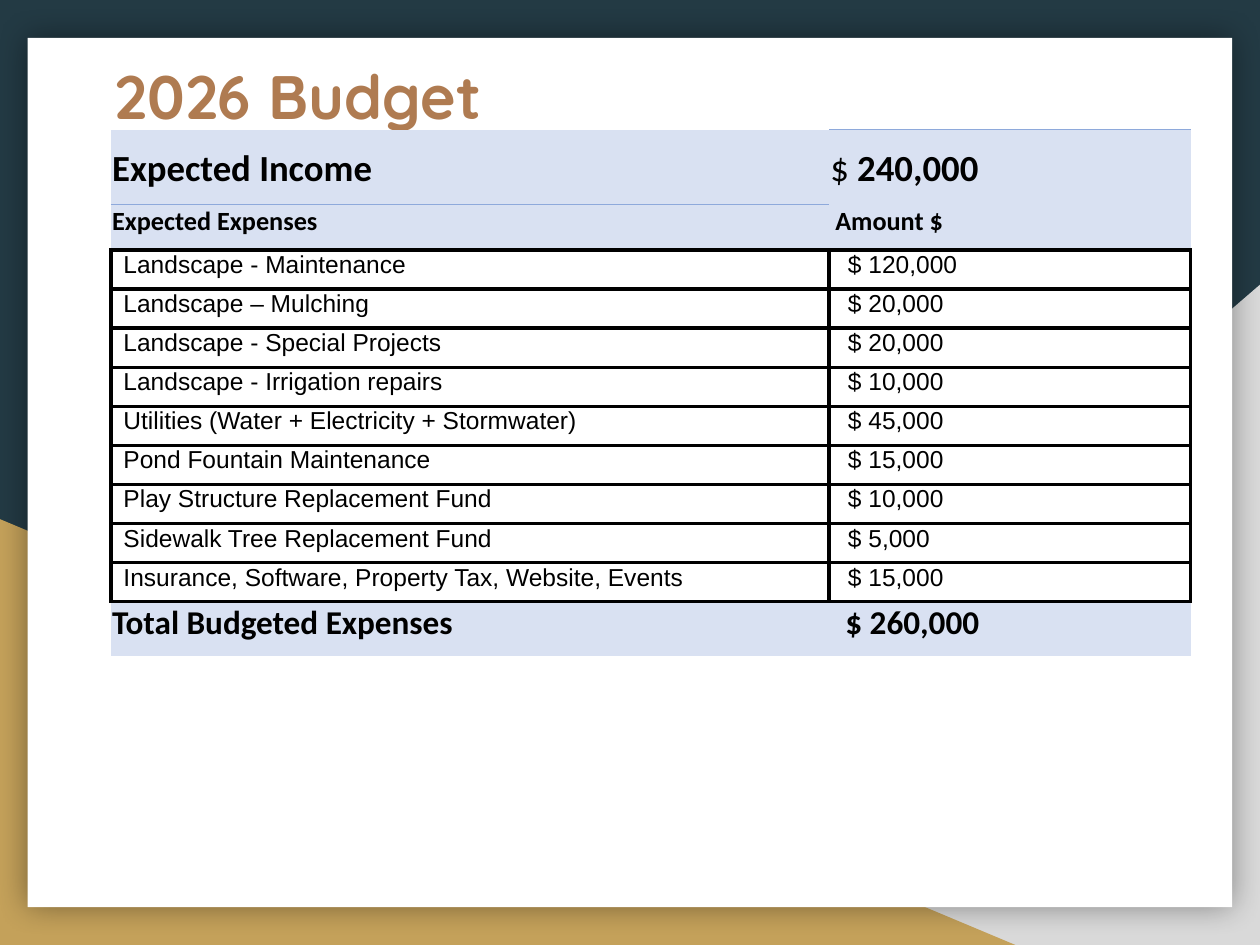
from lxml import etree
from pptx import Presentation
from pptx.dml.color import RGBColor
from pptx.enum.shapes import MSO_SHAPE
from pptx.enum.text import MSO_ANCHOR, MSO_AUTO_SIZE, PP_ALIGN
from pptx.oxml.ns import qn
from pptx.util import Inches, Pt

RECTANGLE, TRIANGLE = MSO_SHAPE.RECTANGLE, MSO_SHAPE.RIGHT_TRIANGLE
TOP, BOTTOM = MSO_ANCHOR.TOP, MSO_ANCHOR.BOTTOM

NAVY = RGBColor(0x23, 0x3A, 0x44)
GRAY = RGBColor(0xD9, 0xD9, 0xD9)
GOLD = RGBColor(0xC4, 0xA1, 0x5A)
WHITE = RGBColor(0xFF, 0xFF, 0xFF)
BLACK = RGBColor(0, 0, 0)
COPPER = RGBColor(0xAF, 0x7B, 0x51)
PALE_BLUE = RGBColor(0xD9, 0xE1, 0xF2)
RULE_BLUE = RGBColor(0x8E, 0xA9, 0xDB)

PLAIN_TABLE = "{2D5ABB26-0587-4C30-8999-92F81FD0307C}"
THICK, THIN = (BLACK, 2.25), (RULE_BLUE, 0.75)
COLUMNS = (5.7, 2.87)
INCOME_HEIGHT, HEADING_HEIGHT, EXPENSE_HEIGHT, TOTAL_HEIGHT = 0.59, 0.36, 0.31, 0.43

EXPENSES = [
    ("Landscape - Maintenance", "$ 120,000"),
    ("Landscape – Mulching", "$ 20,000"),
    ("Landscape - Special Projects", "$ 20,000"),
    ("Landscape - Irrigation repairs", "$ 10,000"),
    ("Utilities (Water + Electricity + Stormwater)", "$ 45,000"),
    ("Pond Fountain Maintenance", "$ 15,000"),
    ("Play Structure Replacement Fund", "$ 10,000"),
    ("Sidewalk Tree Replacement Fund", "$ 5,000"),
    ("Insurance, Software, Property Tax, Website, Events", "$ 15,000"),
]


def add_panel(page, kind, left, top, width, height, color):
    panel = page.shapes.add_shape(
        kind, Inches(left), Inches(top), Inches(width), Inches(height))
    panel.shadow.inherit = False
    panel.fill.solid()
    panel.fill.fore_color.rgb = color
    panel.line.fill.background()
    return panel


def add_soft_shadow(panel):
    effects = panel.element.spPr.find(qn("a:effectLst"))
    shadow = etree.SubElement(effects, qn("a:outerShdw"), blurRad=str(Pt(18)),
                              dist="0", algn="ctr", rotWithShape="0")
    color = etree.SubElement(shadow, qn("a:srgbClr"), val=str(BLACK))
    etree.SubElement(color, qn("a:alpha"), val="40000")


def add_backdrop(page):
    page.background.fill.solid()
    page.background.fill.fore_color.rgb = NAVY
    right_corner = add_panel(page, TRIANGLE, 3.92, 2.26, 6.08, 5.24, GRAY)
    right_corner.element.spPr.find(qn("a:xfrm")).set("flipH", "1")
    add_panel(page, TRIANGLE, 0, 4.12, 8.06, 3.38, GOLD)
    add_soft_shadow(add_panel(page, RECTANGLE, 0.22, 0.3, 9.56, 6.9, WHITE))


def format_span(span, font, size, color, bold):
    span.font.name = font
    span.font.size = Pt(size)
    span.font.color.rgb = color
    span.font.bold = bold


def set_title(page, text):
    title = page.shapes.title
    title.left, title.top = Inches(0.81), Inches(0.36)
    title.width, title.height = Inches(8.21), Inches(0.48)
    frame = title.text_frame
    frame.text = text
    frame.auto_size = MSO_AUTO_SIZE.NONE
    frame.vertical_anchor = TOP
    frame.margin_left = frame.margin_right = Inches(0.1)
    frame.margin_top = frame.margin_bottom = Inches(0.1)
    para = frame.paragraphs[0]
    para.alignment = PP_ALIGN.LEFT
    format_span(para.runs[0], "Quicksand", 35, COPPER, True)
    # Bring the title in front of the backdrop
    page.shapes.element.append(title.element)


def set_borders(cell, **sides):
    properties = cell._tc.get_or_add_tcPr()
    for side in "LRTB":
        color, width = sides.get(side, (None, 0))
        line = etree.SubElement(properties, qn("a:ln" + side), w=str(Pt(width)))
        if color is None:
            etree.SubElement(line, qn("a:noFill"))
        else:
            fill = etree.SubElement(line, qn("a:solidFill"))
            etree.SubElement(fill, qn("a:srgbClr"), val=str(color))


def set_margins(cell, left, top, right, bottom):
    cell.margin_left, cell.margin_top = Inches(left), Inches(top)
    cell.margin_right, cell.margin_bottom = Inches(right), Inches(bottom)


def fill_band_cell(cell, text, size, indent=0.01, **sides):
    set_borders(cell, **sides)
    cell.fill.solid()
    cell.fill.fore_color.rgb = PALE_BLUE
    cell.vertical_anchor = BOTTOM
    set_margins(cell, indent, 0.01, 0.01, 0.1)
    cell.text = text
    format_span(cell.text_frame.paragraphs[0].runs[0], "Calibri", size, BLACK, True)


def fill_expense_cell(cell, text, indent):
    set_borders(cell, L=THICK, R=THICK, T=THICK, B=THICK)
    cell.fill.background()
    cell.vertical_anchor = TOP
    set_margins(cell, indent, 0.1, 0.1, 0.1)
    cell.text = text
    para = cell.text_frame.paragraphs[0]
    para.line_spacing = 0.5
    format_span(para.runs[0], "Arial", 14, BLACK, False)


def add_budget_table(page):
    heights = [INCOME_HEIGHT, HEADING_HEIGHT,
               *[EXPENSE_HEIGHT] * len(EXPENSES), TOTAL_HEIGHT]
    frame = page.shapes.add_table(
        len(heights), len(COLUMNS), Inches(0.88), Inches(1.03),
        Inches(sum(COLUMNS)), Inches(sum(heights)))
    table = frame.table
    table.first_row = table.horz_banding = False
    table._tbl.tblPr.find(qn("a:tableStyleId")).text = PLAIN_TABLE
    for column, width in zip(table.columns, COLUMNS):
        column.width = Inches(width)
    for row, height in zip(table.rows, heights):
        row.height = Inches(height)

    # Income and column headings
    fill_band_cell(table.cell(0, 0), "Expected Income", 21, B=THIN)
    income = table.cell(0, 1)
    fill_band_cell(income, "$ ", 21, T=THIN)
    para = income.text_frame.paragraphs[0]
    para.runs[0].font.bold = False
    amount = para.add_run()
    amount.text = "240,000"
    format_span(amount, "Calibri", 21, BLACK, True)
    fill_band_cell(table.cell(1, 0), "Expected Expenses", 15, T=THIN, B=THICK)
    fill_band_cell(table.cell(1, 1), "Amount $", 15, indent=0.05, B=THICK)

    # Expense lines
    for index, (name, cost) in enumerate(EXPENSES, start=2):
        fill_expense_cell(table.cell(index, 0), name, 0.1)
        fill_expense_cell(table.cell(index, 1), cost, 0.15)

    # Total
    last = len(heights) - 1
    fill_band_cell(table.cell(last, 0), "Total Budgeted Expenses", 19, T=THICK)
    fill_band_cell(table.cell(last, 1), "$ 260,000", 19, indent=0.13, T=THICK)


def main():
    deck = Presentation()
    deck.slide_width, deck.slide_height = Inches(10), Inches(7.5)
    page = deck.slides.add_slide(deck.slide_layouts[5])
    add_backdrop(page)
    set_title(page, "2026 Budget")
    add_budget_table(page)
    deck.save("out.pptx")


if __name__ == "__main__":
    main()
